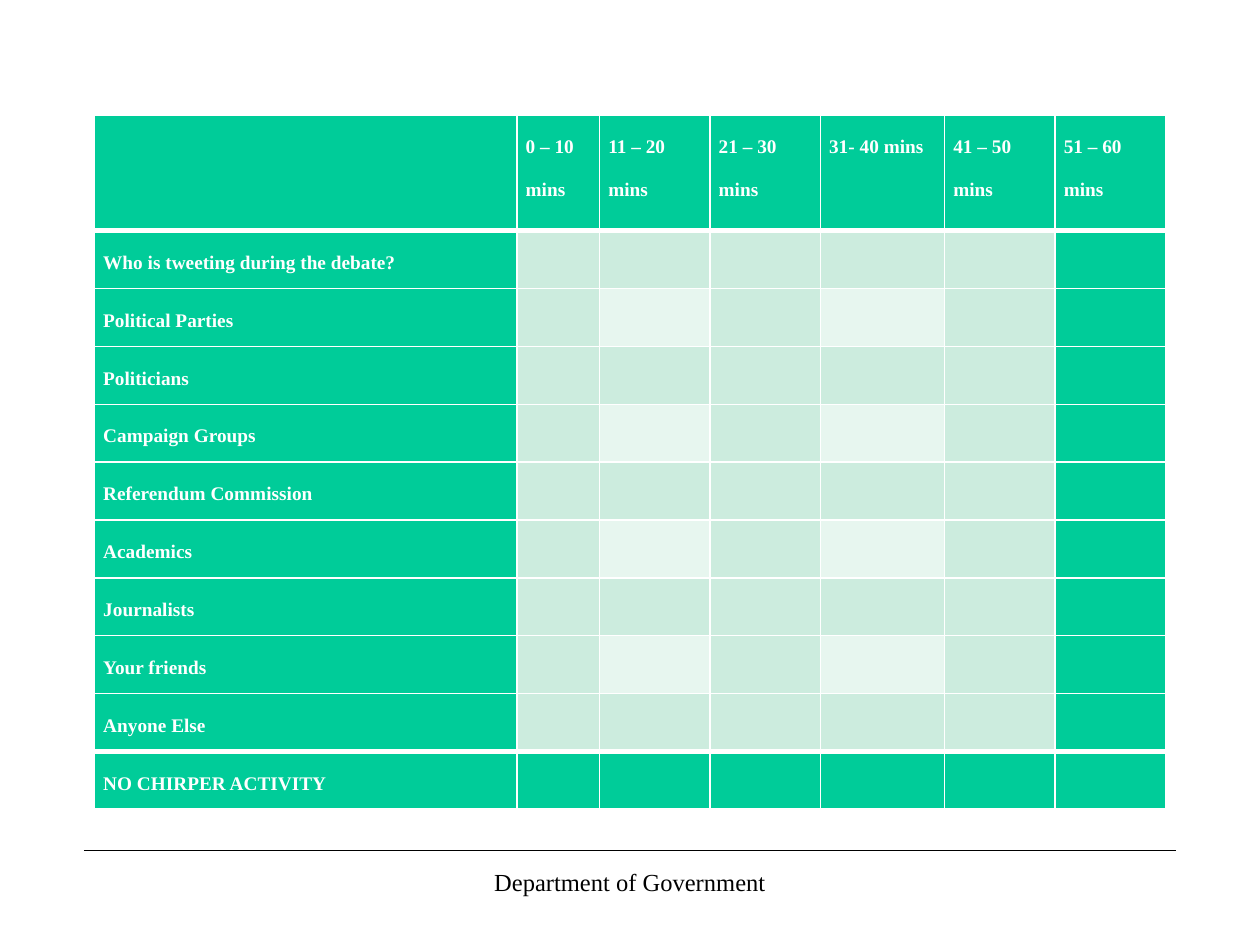
from dataclasses import dataclass

from lxml import etree
from pptx import Presentation
from pptx import util as u
from pptx.dml.color import RGBColor
from pptx.enum import shapes, text
from pptx.oxml import ns


@dataclass(frozen=True)
class Theme:
    font: str = "Times New Roman"
    table_size: float = 11
    footer_size: float = 14
    accent: str = "00CC99"
    band: str = "CCECDE"
    pale: str = "E7F6EF"
    white: str = "FFFFFF"
    black: str = "000000"
    thin: float = 1
    thick: float = 3


THEME = Theme()

PERIODS = ["0 – 10 mins", "11 – 20 mins", "21 – 30 mins",
           "31- 40 mins", "41 – 50 mins", "51 – 60 mins"]
GROUPS = ["Who is tweeting during the debate?", "Political Parties", "Politicians",
          "Campaign Groups", "Referendum Commission", "Academics", "Journalists",
          "Your friends", "Anyone Else", "NO CHIRPER ACTIVITY"]
COLUMN_WIDTHS = [241.4, 47.2, 63.1, 63.1, 71, 63.1, 63.1]
ROW_HEIGHT = 33.06  # the header row is twice as high


def format_runs(paragraph, size, color, bold=False):
    for run in paragraph.runs:
        run.font.name = THEME.font
        run.font.size = u.Pt(size)
        run.font.bold = bold
        run.font.color.rgb = RGBColor.from_string(color)


def set_borders(cell, top, bottom):
    properties = cell._tc.get_or_add_tcPr()
    widths = {"L": THEME.thin, "R": THEME.thin, "T": top, "B": bottom}
    for side, width in widths.items():
        line = etree.SubElement(properties, ns.qn(f"a:ln{side}"), w=str(u.Pt(width)))
        fill = etree.SubElement(line, ns.qn("a:solidFill"))
        etree.SubElement(fill, ns.qn("a:srgbClr"), val=THEME.white)


def cell_color(row, column):
    if row in (0, len(GROUPS)) or column in (0, len(PERIODS)):
        return THEME.accent
    return THEME.pale if row % 2 == 0 and column % 2 == 0 else THEME.band


def fill_cell(cell, row, column, label):
    # Thick rules set off the header and the last row
    set_borders(cell,
                top=THEME.thick if row in (1, len(GROUPS)) else THEME.thin,
                bottom=THEME.thick if row in (0, len(GROUPS) - 1) else THEME.thin)
    cell.fill.solid()
    cell.fill.fore_color.rgb = RGBColor.from_string(cell_color(row, column))
    if label:
        cell.margin_left = cell.margin_right = u.Pt(5)
        cell.margin_top = cell.margin_bottom = u.Pt(0)
        cell.text_frame.text = label
        paragraph = cell.text_frame.paragraphs[0]
        paragraph.line_spacing = 2.0
        format_runs(paragraph, THEME.table_size, THEME.white, bold=True)


def add_schedule(slide, left, top):
    labels = [[""] + PERIODS] + [[group] + [""] * len(PERIODS) for group in GROUPS]
    shape = slide.shapes.add_table(
        len(labels), len(COLUMN_WIDTHS), u.Pt(left), u.Pt(top),
        u.Pt(sum(COLUMN_WIDTHS)), u.Pt(ROW_HEIGHT * (len(labels) + 1)))
    table = shape.table
    table.first_row = table.horz_banding = False
    for column, width in zip(table.columns, COLUMN_WIDTHS):
        column.width = u.Pt(width)
    for row, row_labels in enumerate(labels):
        table.rows[row].height = u.Pt(ROW_HEIGHT * (2 if row == 0 else 1))
        for column, label in enumerate(row_labels):
            fill_cell(table.cell(row, column), row, column, label)


def add_rule(slide, left, right, y):
    rule = slide.shapes.add_connector(
        shapes.MSO_CONNECTOR.STRAIGHT, u.Pt(left), u.Pt(y), u.Pt(right), u.Pt(y))
    rule.line.color.rgb = RGBColor.from_string(THEME.black)
    rule.line.width = u.Pt(0.75)
    etree.SubElement(rule._element.spPr, ns.qn("a:effectLst"))


def add_footer(slide, label, left, top, width, height):
    shape = slide.shapes.add_textbox(u.Pt(left), u.Pt(top), u.Pt(width), u.Pt(height))
    shape.text_frame.word_wrap = True
    shape.text_frame.text = label
    paragraph = shape.text_frame.paragraphs[0]
    paragraph.alignment = text.PP_ALIGN.CENTER
    format_runs(paragraph, THEME.footer_size, THEME.black)


def main():
    presentation = Presentation()
    presentation.slide_width, presentation.slide_height = u.Pt(720), u.Pt(540)
    slide = presentation.slides.add_slide(presentation.slide_layouts[6])

    # Footer
    add_rule(slide, left=48, right=672, y=486)
    add_footer(slide, "Department of Government", 246, 492, 228, 36)

    # Activity table
    add_schedule(slide, left=54, top=65.8)

    presentation.save("out.pptx")


if __name__ == "__main__":
    main()
